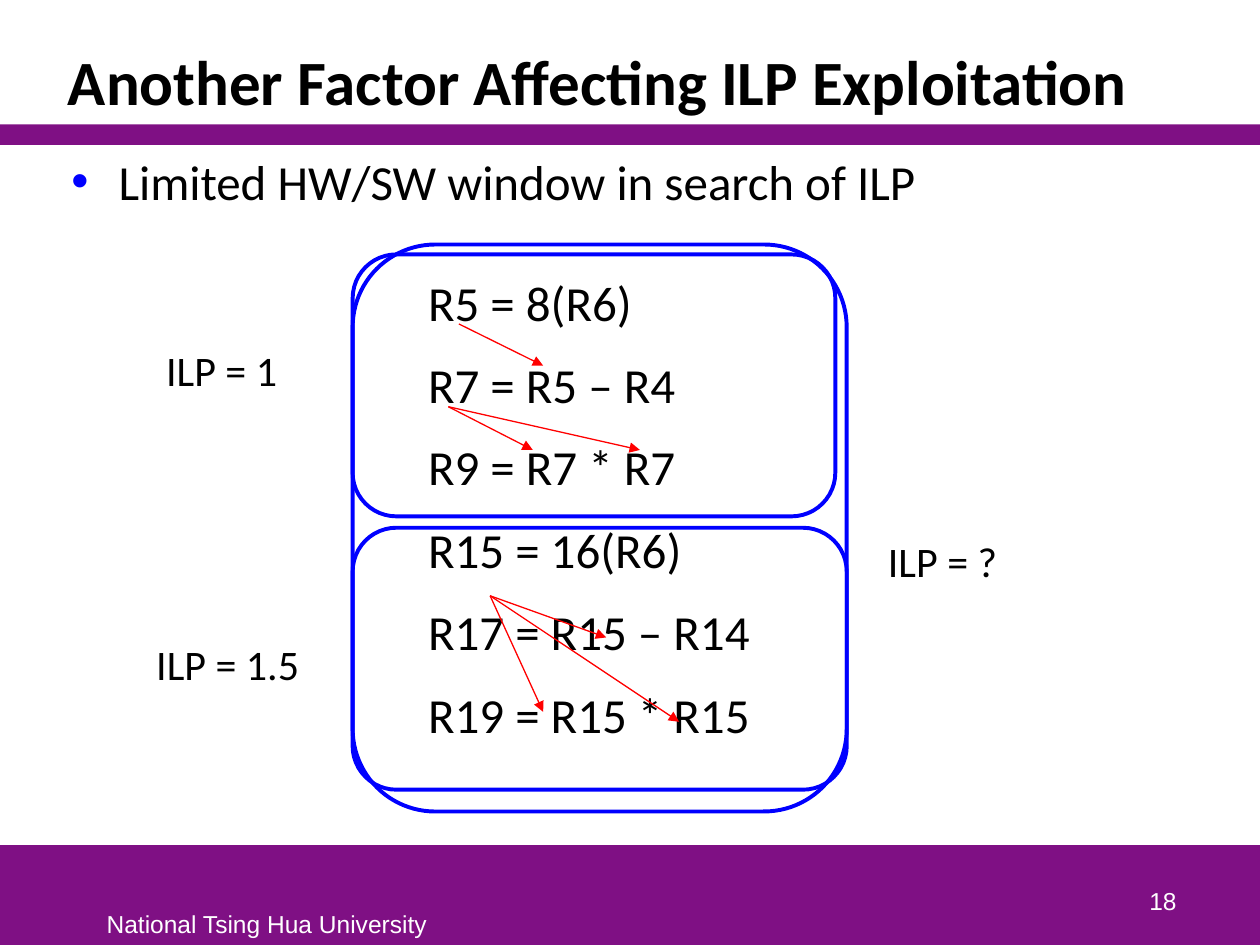
import pptx
import pptx.dml.color
import pptx.enum.shapes
import pptx.enum.text
import pptx.oxml
import pptx.oxml.ns
import pptx.util

Cm = pptx.util.Cm
Pt = pptx.util.Pt
SHAPE = pptx.enum.shapes.MSO_SHAPE
ALIGN = pptx.enum.text.PP_ALIGN
ANCHOR = pptx.enum.text.MSO_ANCHOR
PURPLE, BLUE, RED, BLACK, WHITE = "7F1084", "0000FF", "FF0000", "000000", "FFFFFF"


def color(value):
    """Turn a hex string into an RGB colour."""
    return pptx.dml.color.RGBColor.from_string(value)


def add_xml(parent, xml):
    """Append a DrawingML element to parent and return it."""
    el = pptx.oxml.parse_xml(xml.replace("NS", pptx.oxml.ns.nsdecls("a"), 1))
    parent.append(el)
    return el


def add_band(s, top, height):
    """Draw a purple band across the slide."""
    sp = s.shapes.add_shape(SHAPE.RECTANGLE, 0, Cm(top), Cm(25.4), Cm(height))
    sp.shadow.inherit = False
    sp.fill.solid()
    sp.fill.fore_color.rgb = color(PURPLE)
    sp.line.fill.background()


def add_window(s, top, width, height):
    """Draw a blue rounded outline around a window of instructions."""
    sp = s.shapes.add_shape(SHAPE.ROUNDED_RECTANGLE, Cm(7.11), Cm(top), Cm(width), Cm(height))
    sp.shadow.inherit = False
    sp.adjustments[0] = 0.167
    sp.fill.background()
    sp.line.color.rgb = color(BLUE)
    sp.line.width = Pt(2.25)


def add_text(s, box, lines, size, font="Calibri", hex_color=BLACK, bold=False,
             align=ALIGN.LEFT, anchor=ANCHOR.TOP, gap=0):
    """Add a text box with one paragraph per line and return its frame."""
    tf = s.shapes.add_textbox(*map(Cm, box)).text_frame
    tf.word_wrap = True
    tf.vertical_anchor = anchor
    tf.text = "\n".join(lines)
    for i, p in enumerate(tf.paragraphs):
        p.alignment = align
        if gap and i:
            p.space_before = Pt(gap)
        for r in p.runs:
            r.font.name = font
            r.font.size = Pt(size)
            r.font.bold = bold
            r.font.color.rgb = color(hex_color)
    return tf


def add_bullet(p):
    """Give a paragraph a blue bullet with a hanging indent."""
    pPr = p._p.get_or_add_pPr()
    pPr.set("marL", str(Cm(0.95)))
    pPr.set("indent", str(-Cm(0.95)))
    add_xml(pPr, f'<a:buClr NS><a:srgbClr val="{BLUE}"/></a:buClr>')
    add_xml(pPr, '<a:buFont NS typeface="Arial"/>')
    add_xml(pPr, '<a:buChar NS char="•"/>')


def add_arrow(s, start, end):
    """Draw a thin red dependence arrow."""
    cx = s.shapes.add_connector(pptx.enum.shapes.MSO_CONNECTOR.STRAIGHT,
                                *map(Cm, start + end))
    cx.line.color.rgb = color(RED)
    cx.line.width = Pt(0.75)
    add_xml(cx.line._get_or_add_ln(), '<a:tailEnd NS type="triangle"/>')
    add_xml(cx._element.spPr, '<a:effectLst NS/>')


def main():
    """Build the slide and save it."""
    prs = pptx.Presentation()
    prs.slide_width, prs.slide_height = Cm(25.4), Cm(19.05)
    s = prs.slides.add_slide(prs.slide_layouts[6])

    add_band(s, 17.04, 2.01)
    add_band(s, 2.51, 0.41)
    add_text(s, (1.9, 18.21, 7.2, 0.84), ["National Tsing Hua University"], 14, "Arial", WHITE)
    add_text(s, (18.69, 17.3, 5.28, 1.27), ["18"], 14, "Arial", WHITE,
             align=ALIGN.RIGHT, anchor=ANCHOR.BOTTOM)

    title = add_text(s, (1.12, 0.63, 22.78, 1.88), ["Another Factor Affecting ILP Exploitation"],
                     36, bold=True, anchor=ANCHOR.BOTTOM)
    title.paragraphs[0].line_spacing = 0.85
    body = add_text(s, (1.19, 2.92, 22.71, 13.79), ["Limited HW/SW window in search of ILP"], 28)
    add_bullet(body.paragraphs[0])

    instructions = ["R5 = 8(R6)", "R7 = R5 – R4", "R9 = R7 * R7",
                    "R15 = 16(R6)", "R17 = R15 – R14", "R19 = R15 * R15"]
    add_text(s, (8.38, 5.36, 9.32, 10.34), instructions, 28, gap=13.5)

    for window in ((5.13, 9.73, 5.28), (10.64, 9.96, 5.28), (4.93, 9.96, 11.43)):
        add_window(s, *window)
    for label, left, top, width in (("ILP = 1", 3.1, 6.83, 2.97),
                                    ("ILP = 1.5", 2.9, 12.75, 3.61),
                                    ("ILP = ?", 17.65, 10.67, 3)):
        add_text(s, (left, top, width, 1.27), [label], 24)

    dependences = {
        (9.25, 6.53): [(10.95, 7.37)],
        (9.04, 8.2): [(10.74, 9.07), (12.9, 9.07)],
        (9.88, 12.01): [(12.22, 12.85), (10.95, 14.35), (13.69, 14.55)],
    }
    for start, ends in dependences.items():
        for end in ends:
            add_arrow(s, start, end)

    prs.save("out.pptx")


if __name__ == "__main__":
    main()
